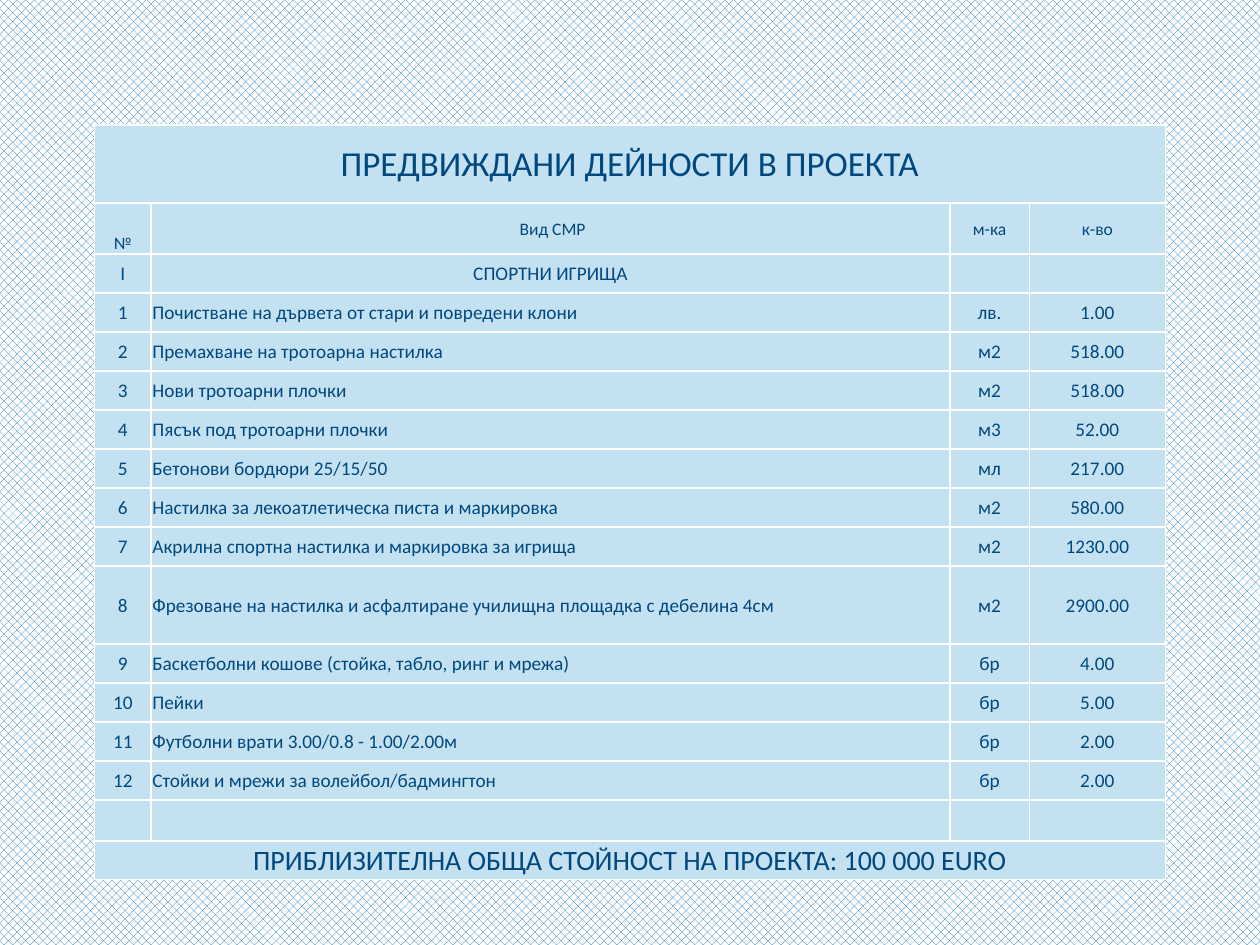
from dataclasses import dataclass

from lxml import etree
from pptx import Presentation
from pptx import util as u
from pptx.dml.color import RGBColor
from pptx.enum import dml, text
from pptx.oxml.ns import qn


@dataclass(frozen=True)
class Theme:
    font: str = "Calibri"
    ink: str = "00487E"
    cell: str = "C4E1F2"
    rule: str = "FFFFFF"
    hatch: str = "0070C0"
    paper: str = "FFFFFF"
    title_size: int = 20
    total_size: int = 16
    body_size: int = 11
    header_size: int = 10


CENTER, JUSTIFY = text.PP_ALIGN.CENTER, text.PP_ALIGN.JUSTIFY
MIDDLE, BOTTOM = text.MSO_ANCHOR.MIDDLE, text.MSO_ANCHOR.BOTTOM

TITLE = "ПРЕДВИЖДАНИ ДЕЙНОСТИ В ПРОЕКТА"
TOTAL = "ПРИБЛИЗИТЕЛНА ОБЩА СТОЙНОСТ НА ПРОЕКТА: 100 000 EURO"
HEADINGS = ("№", " Вид СМР", "м-ка", "к-во")
SECTION = ("I", "СПОРТНИ ИГРИЩА", "", "")
WORKS = [
    ("Почистване на дървета от стари и повредени клони", "лв.", "1.00"),
    ("Премахване на тротоарна настилка", "м2", "518.00"),
    ("Нови тротоарни плочки", "м2", "518.00"),
    ("Пясък под тротоарни плочки", "м3", "52.00"),
    ("Бетонови бордюри 25/15/50", "мл", "217.00"),
    ("Настилка за лекоатлетическа писта и маркировка", "м2", "580.00"),
    ("Акрилна спортна настилка и маркировка за игрища", "м2", "1230.00"),
    ("Фрезоване на настилка и асфалтиране училищна площадка с дебелина 4см",
     "м2", "2900.00"),
    ("Баскетболни кошове (стойка, табло, ринг и мрежа)", "бр", "4.00"),
    ("Пейки", "бр", "5.00"),
    ("Футболни врати 3.00/0.8 - 1.00/2.00м", "бр", "2.00"),
    ("Стойки и мрежи за волейбол/бадмингтон", "бр", "2.00"),
]

COLUMN_WIDTHS = (32.4, 456.4, 45.4, 77.8)
LINE, DOUBLE = 22.3, 44.6
ROW_HEIGHTS = [DOUBLE, 29.2, LINE] + [LINE] * len(WORKS) + [23.4, 22]
ROW_HEIGHTS[10] = DOUBLE  # work no. 8


class SlideBuilder:
    def __init__(self, slide, theme):
        self.slide, self.theme = slide, theme

    def background(self):
        fill = self.slide.background.fill
        fill.patterned()
        fill.pattern = dml.MSO_PATTERN.PERCENT_50
        fill.fore_color.rgb = RGBColor.from_string(self.theme.hatch)
        fill.back_color.rgb = RGBColor.from_string(self.theme.paper)

    def table(self, left, top, widths, heights):
        grid = self.slide.shapes.add_table(
            len(heights), len(widths), u.Pt(left), u.Pt(top),
            u.Pt(sum(widths)), u.Pt(sum(heights))).table
        grid.first_row = grid.horz_banding = False
        for column, width in zip(grid.columns, widths):
            column.width = u.Pt(width)
        for row, height in zip(grid.rows, heights):
            row.height = u.Pt(height)
        for cell in grid.iter_cells():
            self.borders(cell)
            cell.fill.solid()
            cell.fill.fore_color.rgb = RGBColor.from_string(self.theme.cell)
        return grid

    def borders(self, cell):
        properties = cell._tc.get_or_add_tcPr()
        for side in ("a:lnL", "a:lnR", "a:lnT", "a:lnB"):
            line = etree.SubElement(properties, qn(side), w=str(u.Pt(1)))
            paint = etree.SubElement(line, qn("a:solidFill"))
            etree.SubElement(paint, qn("a:srgbClr"), val=self.theme.rule)

    def cell(self, cell, words, size, align=CENTER, anchor=MIDDLE):
        cell.margin_left = cell.margin_right = cell.margin_top = u.Pt(0.7)
        cell.margin_bottom = 0
        cell.vertical_anchor = anchor
        paragraph = cell.text_frame.paragraphs[0]
        paragraph.alignment = align
        if not words:
            # Keep empty cells from stretching their row
            etree.SubElement(paragraph._p, qn("a:endParaRPr"), sz=str(size * 100))
            return
        paragraph.text = words
        font = paragraph.runs[0].font
        font.name, font.size = self.theme.font, u.Pt(size)
        font.color.rgb = RGBColor.from_string(self.theme.ink)

    def banner(self, grid, row, words, size):
        first = grid.cell(row, 0)
        first.merge(grid.cell(row, len(grid.columns) - 1))
        self.cell(first, words, size)

    def row(self, grid, row, entries, size, name_align=CENTER, number_anchor=MIDDLE):
        for column, words in enumerate(entries):
            self.cell(grid.cell(row, column), words, size,
                      name_align if column == 1 else CENTER,
                      number_anchor if column == 0 else MIDDLE)


def main():
    deck = Presentation()
    deck.slide_width, deck.slide_height = u.Pt(720), u.Pt(540)
    theme = Theme()
    builder = SlideBuilder(deck.slides.add_slide(deck.slide_layouts[6]), theme)
    builder.background()

    # Table with its title and column headings
    activities = builder.table(54, 71.4, COLUMN_WIDTHS, ROW_HEIGHTS)
    builder.banner(activities, 0, TITLE, theme.title_size)
    builder.row(activities, 1, HEADINGS, theme.header_size, number_anchor=BOTTOM)

    # Section and its numbered works
    builder.row(activities, 2, SECTION, theme.body_size)
    for number, work in enumerate(WORKS, 1):
        builder.row(activities, number + 2, (str(number), *work),
                    theme.body_size, JUSTIFY)

    # Spacer row and total
    last = len(ROW_HEIGHTS) - 1
    builder.row(activities, last - 1, [""] * len(COLUMN_WIDTHS), theme.body_size)
    builder.banner(activities, last, TOTAL, theme.total_size)

    deck.save("out.pptx")


if __name__ == "__main__":
    main()
